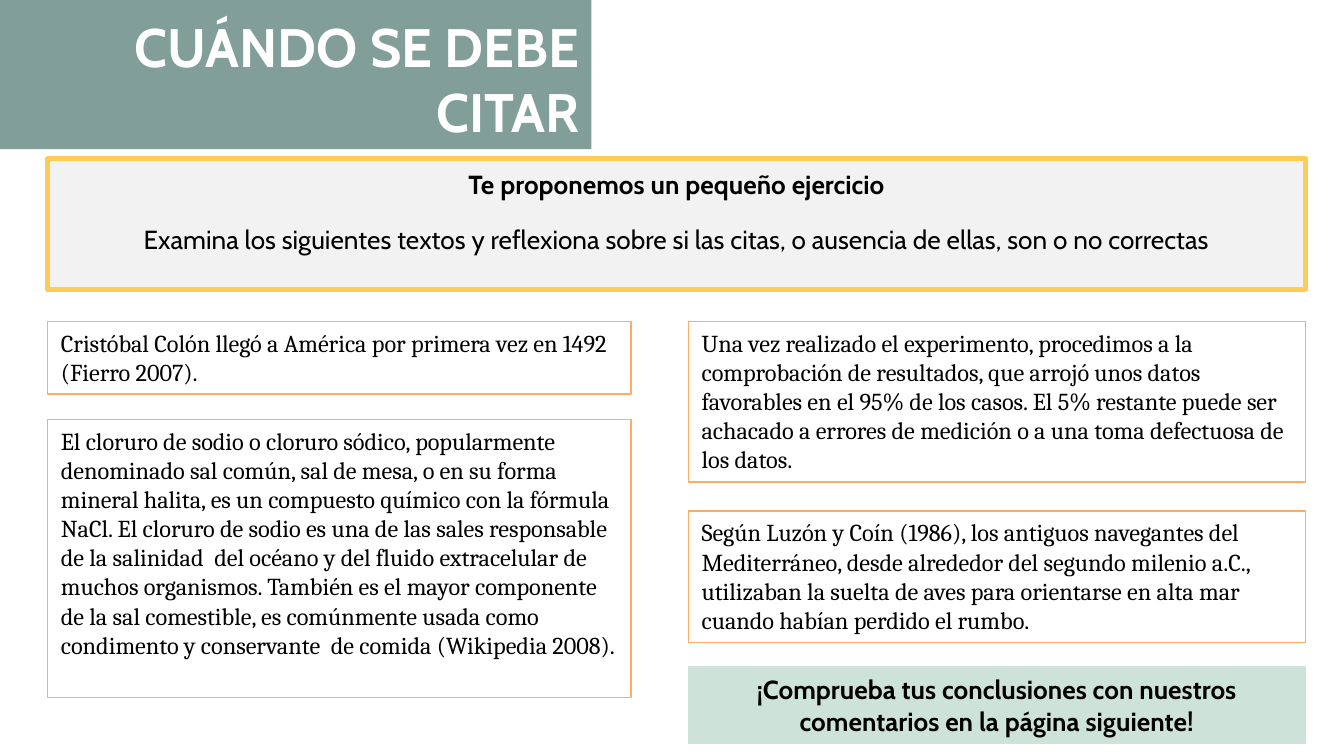
import pptx
import pptx.util
import pptx.dml.color
import pptx.enum.shapes
import pptx.enum.text

WIDTH = pptx.util.Inches(10)
HEIGHT = WIDTH * 9 // 16
ALIGN = pptx.enum.text.PP_ALIGN


def color(value):
    return pptx.dml.color.RGBColor.from_string(value)


def within(box, x, y, w, h):
    left, top, width, height = box
    return (left + width * x / 100, top + height * y / 100,
            width * w / 100, height * h / 100)


def emu(box):
    return [round(v) for v in box]


def add_rect(s, box, fill, line=None, weight=0.75):
    sp = s.shapes.add_shape(pptx.enum.shapes.MSO_SHAPE.RECTANGLE, *emu(box))
    sp.shadow.inherit = False
    sp.fill.solid()
    sp.fill.fore_color.rgb = color(fill)
    if line:
        sp.line.color.rgb = color(line)
        sp.line.width = pptx.util.Pt(weight)
    else:
        sp.line.fill.background()
    return sp


def write(sp, text, size=13, font="Cambria", ink="000000", bold=False,
          align=ALIGN.LEFT, inset=0.05, spacing=None, before=0, new=False):
    tf = sp.text_frame
    tf.word_wrap = True
    tf.vertical_anchor = pptx.enum.text.MSO_ANCHOR.TOP
    tf.margin_left = tf.margin_right = pptx.util.Inches(0.1)
    tf.margin_top = tf.margin_bottom = pptx.util.Inches(inset)
    p = tf.add_paragraph() if new else tf.paragraphs[0]
    p.alignment = align
    if spacing:
        p.line_spacing = spacing
    if before:
        p.space_before = pptx.util.Pt(before)
    r = p.add_run()
    r.text = text
    r.font.size = pptx.util.Pt(size)
    r.font.name = font
    r.font.bold = bold
    r.font.color.rgb = color(ink)


def add_title(s, box, text):
    add_rect(s, box, "829E98")
    sp = s.shapes.add_textbox(*emu(within(box, 1.1, 0, 99.1, 56.8)))
    write(sp, text, size=29, font="Cabin", ink="FFFFFF", bold=True,
          align=ALIGN.RIGHT, inset=0.1)


def add_exercise(s, box, heading, task):
    sp = add_rect(s, box, "F2F2F2", "FFCB57", 3)
    style = dict(size=14, font="Cabin", align=ALIGN.CENTER, inset=0.04, spacing=1.15)
    write(sp, heading, bold=True, **style)
    write(sp, task, before=10, new=True, **style)


def add_examples(s, box, examples):
    for top, height, text in examples:
        write(add_rect(s, within(box, 0, top, 100, height), "FFFFFF", "FFAB61"), text)


def add_closing(s, box, text):
    sp = add_rect(s, box, "CDE2D9", "CDE2D9")
    write(sp, text, size=14, font="Cabin", bold=True, align=ALIGN.CENTER)


LEFT_EXAMPLES = [
    (0, 17.2, "Cristóbal Colón llegó a América por primera vez en 1492 (Fierro 2007)."),
    (23.2, 65.9,
     "El cloruro de sodio o cloruro sódico, popularmente denominado sal común, "
     "sal de mesa, o en su forma mineral halita, es un compuesto químico con la "
     "fórmula NaCl. El cloruro de sodio es una de las sales responsable de la "
     "salinidad  del océano y del fluido extracelular de muchos organismos. "
     "También es el mayor componente de la sal comestible, es comúnmente usada "
     "como condimento y conservante  de comida (Wikipedia 2008)."),
]
RIGHT_EXAMPLES = [
    (0, 38,
     "Una vez realizado el experimento, procedimos a la comprobación de "
     "resultados, que arrojó unos datos favorables en el 95% de los casos. El 5% "
     "restante puede ser achacado a errores de medición o a una toma defectuosa "
     "de los datos."),
    (44.9, 31.2,
     "Según Luzón y Coín (1986), los antiguos navegantes del Mediterráneo, desde "
     "alrededor del segundo milenio a.C., utilizaban la suelta de aves para "
     "orientarse en alta mar cuando habían perdido el rumbo."),
]


def main():
    prs = pptx.Presentation()
    prs.slide_width, prs.slide_height = WIDTH, HEIGHT
    s = prs.slides.add_slide(prs.slide_layouts[6])
    page = (0, 0, WIDTH, HEIGHT)
    left = within(page, 3.55, 42.5, 43.4, 55.9)
    right = within(page, 51.22, 42.5, 45.9, 55.9)
    add_exercise(s, within(page, 3.55, 21, 93.6, 17.3),
                 "Te proponemos un pequeño ejercicio",
                 "Examina los siguientes textos y reflexiona sobre si las citas, "
                 "o ausencia de ellas, son o no correctas")
    add_examples(s, left, LEFT_EXAMPLES)
    add_examples(s, right, RIGHT_EXAMPLES)
    add_closing(s, within(right, 0, 81.8, 100, 18.2),
                "¡Comprueba tus conclusiones con nuestros comentarios en la "
                "página siguiente!")
    add_title(s, within(page, 0, 0, 44, 19.75), "CUÁNDO SE DEBE CITAR")
    prs.save("out.pptx")


if __name__ == "__main__":
    main()
